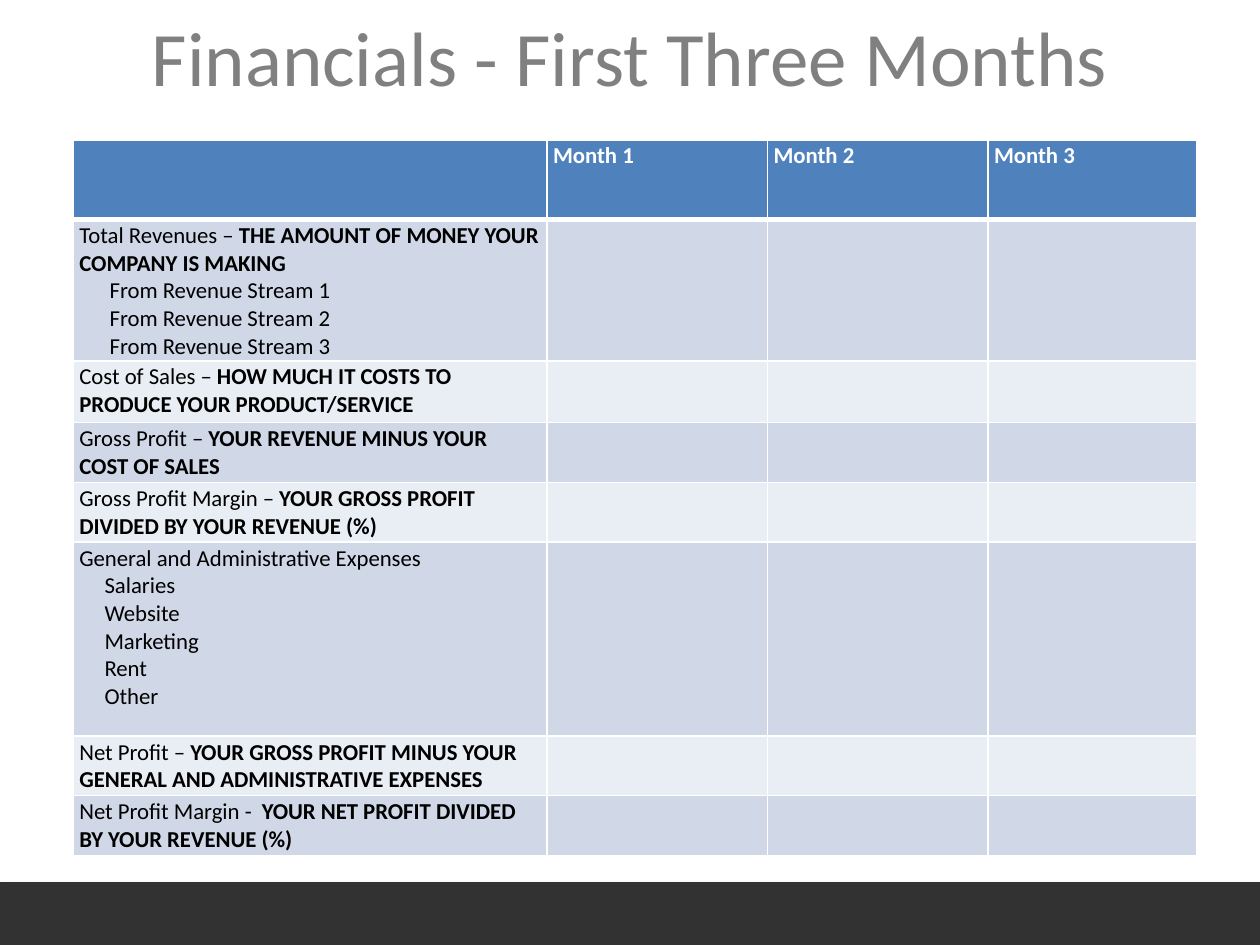
import pptx
import pptx.dml.color
import pptx.enum.shapes
import pptx.enum.text
import pptx.oxml
import pptx.oxml.ns
import pptx.util
from pptx.util import Inches

FONT = "Calibri"
HEADER_FILL = "4F81BD"
BAND_FILLS = ("D0D8E8", "E9EDF4")
COLUMN_WIDTHS = (3.76, 1.75, 1.75, 1.66)
ROW_HEIGHTS = (0.63, 1.11, 0.49, 0.44, 0.44, 1.54, 0.46, 0.44)
HEADINGS = ("", "Month 1", "Month 2", "Month 3")

# Label, bold explanation, indented items, indent in inches
ROWS = (
    ("Total Revenues – ", "THE AMOUNT OF MONEY YOUR COMPANY IS MAKING",
     [f"From Revenue Stream {number}" for number in (1, 2, 3)], 0.24),
    ("Cost of Sales – ", "HOW MUCH IT COSTS TO PRODUCE YOUR PRODUCT/SERVICE", [], 0),
    ("Gross Profit – ", "YOUR REVENUE MINUS YOUR COST OF SALES", [], 0),
    ("Gross Profit Margin – ", "YOUR GROSS PROFIT DIVIDED BY YOUR REVENUE (%)", [], 0),
    ("General and Administrative Expenses", "",
     ["Salaries", "Website", "Marketing", "Rent", "Other"], 0.2),
    ("Net Profit – ", "YOUR GROSS PROFIT MINUS YOUR GENERAL AND ADMINISTRATIVE EXPENSES", [], 0),
    ("Net Profit Margin -  ", "YOUR NET PROFIT DIVIDED BY YOUR REVENUE (%)", [], 0),
)


def rgb(color):
    return pptx.dml.color.RGBColor.from_string(color)


def set_fill(item, color):
    item.fill.solid()
    item.fill.fore_color.rgb = rgb(color)


def set_font(paragraph, size, color, bold=None):
    font = paragraph.font
    font.name = FONT
    font.size = pptx.util.Pt(size)
    font.color.rgb = rgb(color)
    font.bold = bold


def add_footer_bar(slide):
    bar = slide.shapes.add_shape(
        pptx.enum.shapes.MSO_SHAPE.RECTANGLE, Inches(0), Inches(7), Inches(10.01), Inches(0.55))
    set_fill(bar, "323232")
    bar.line.fill.background()
    bar._element.spPr.append(pptx.oxml.parse_xml(
        f'<a:effectLst {pptx.oxml.ns.nsdecls("a")}>'
        '<a:outerShdw blurRad="39370" dist="22860" dir="5400000" rotWithShape="0">'
        '<a:srgbClr val="000000"><a:alpha val="35000"/></a:srgbClr>'
        '</a:outerShdw></a:effectLst>'))


def add_title(slide, text):
    box = slide.shapes.add_textbox(Inches(0.5), Inches(-0.18), Inches(9), Inches(1.25))
    frame = box.text_frame
    frame.word_wrap = True
    frame.vertical_anchor = pptx.enum.text.MSO_ANCHOR.MIDDLE
    paragraph = frame.paragraphs[0]
    paragraph.text = text
    paragraph.alignment = pptx.enum.text.PP_ALIGN.CENTER
    set_font(paragraph, 44, "808080")


def set_borders(cell, top=1, bottom=1):
    """Give the cell white borders; call before its fill is set."""
    properties = cell._tc.get_or_add_tcPr()
    for side, points in (("L", 1), ("R", 1), ("T", top), ("B", bottom)):
        properties.append(pptx.oxml.parse_xml(
            f'<a:ln{side} {pptx.oxml.ns.nsdecls("a")} w="{pptx.util.Pt(points)}">'
            f'<a:solidFill><a:srgbClr val="FFFFFF"/></a:solidFill></a:ln{side}>'))


def style_cell(cell, row):
    set_borders(cell, top=3 if row == 1 else 1, bottom=3 if row == 0 else 1)
    set_fill(cell, BAND_FILLS[(row - 1) % 2] if row else HEADER_FILL)
    cell.margin_left = cell.margin_right = Inches(0.05)
    cell.margin_top = cell.margin_bottom = Inches(0.02)
    set_font(cell.text_frame.paragraphs[0], 13, "000000")


def write_row_label(cell, label, explanation, items, indent):
    frame = cell.text_frame
    paragraph = frame.paragraphs[0]
    set_font(paragraph, 13, "000000", False)
    paragraph.add_run().text = label
    if explanation:
        run = paragraph.add_run()
        run.text = explanation
        run.font.bold = True
    for item in items:
        paragraph = frame.add_paragraph()
        paragraph.text = item
        set_font(paragraph, 13, "000000", False)
        paragraph._p.get_or_add_pPr().set("marL", str(Inches(indent)))


def add_financials_table(slide):
    table = slide.shapes.add_table(
        len(ROW_HEIGHTS), len(COLUMN_WIDTHS), Inches(0.58), Inches(1.11),
        Inches(sum(COLUMN_WIDTHS)), Inches(sum(ROW_HEIGHTS))).table
    for column, width in zip(table.columns, COLUMN_WIDTHS):
        column.width = Inches(width)
    for index, (row, height) in enumerate(zip(table.rows, ROW_HEIGHTS)):
        row.height = Inches(height)
        for cell in row.cells:
            style_cell(cell, index)
    for column, heading in enumerate(HEADINGS):
        paragraph = table.cell(0, column).text_frame.paragraphs[0]
        paragraph.text = heading
        set_font(paragraph, 13, "FFFFFF", True)
    for index, content in enumerate(ROWS, start=1):
        write_row_label(table.cell(index, 0), *content)


def main():
    presentation = pptx.Presentation()
    presentation.slide_width = Inches(10)
    presentation.slide_height = Inches(7.5)
    slide = presentation.slides.add_slide(presentation.slide_layouts[6])
    add_footer_bar(slide)
    add_title(slide, "Financials - First Three Months")
    add_financials_table(slide)
    presentation.save("out.pptx")


if __name__ == "__main__":
    main()
